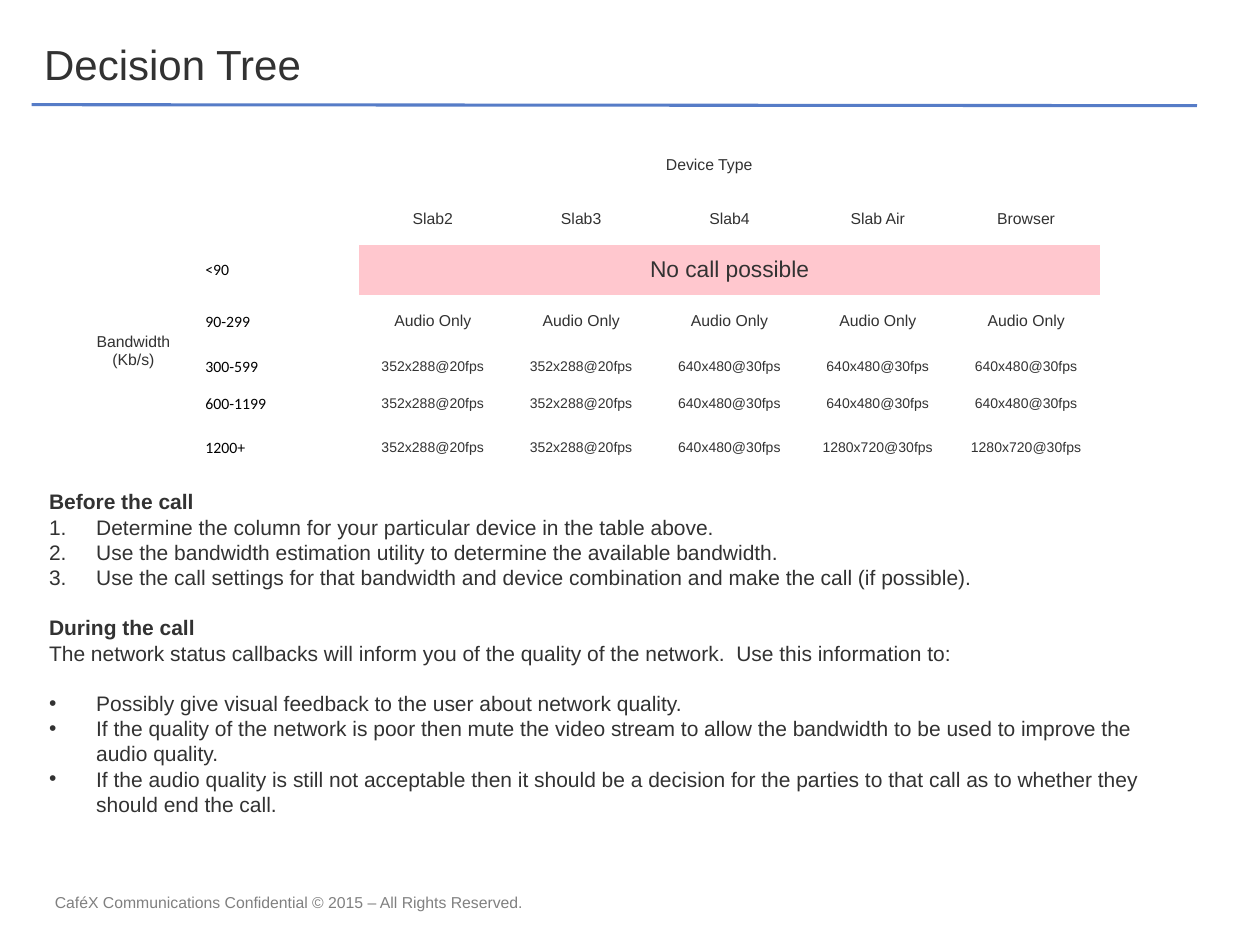
from dataclasses import dataclass

from lxml.etree import SubElement
from pptx import Presentation
from pptx.dml.color import RGBColor
from pptx.enum.shapes import MSO_CONNECTOR
from pptx.enum.text import MSO_ANCHOR, PP_ALIGN
from pptx.oxml.ns import qn
from pptx.util import Cm, Length, Pt

INK = RGBColor(0x32, 0x32, 0x32)
BLACK = RGBColor(0, 0, 0)
GREY = RGBColor(0x80, 0x80, 0x80)
BLUE = RGBColor(0x56, 0x7C, 0xC7)
PINK = RGBColor(0xFF, 0xC7, 0xCE)

INDENT = Cm(0.95)
BODY_LINE = Pt(14.4)
CELL_MARGINS = (0.3, 0.15, 0.3, 0.15)
LABEL_MARGINS = (0.03, 0.03, 0.03, 0)
EMPTY_MARGINS = (0, 0, 0, 0)

COLUMN_WIDTHS = [2.84, 3.12] + [2.99] * 5
ROW_HEIGHTS = [1.19, 0.99, 1.04, 1.04, 0.76, 0.76, 0.99]
DEVICES = ["Slab2", "Slab3", "Slab4", "Slab Air", "Browser"]
LOW, MEDIUM, HIGH = "352x288@20fps", "640x480@30fps", "1280x720@30fps"


@dataclass
class Band:
    label: str
    settings: list[str]
    size: float = 8


@dataclass
class Line:
    text: str
    bold: bool = False
    marker: str = ""
    gap: bool = False


BANDS = [
    Band("<90", ["No call possible"], 13),
    Band("90-299", ["Audio Only"] * 5, 9),
    Band("300-599", [LOW] * 2 + [MEDIUM] * 3),
    Band("600-1199", [LOW] * 2 + [MEDIUM] * 3),
    Band("1200+", [LOW] * 2 + [MEDIUM] + [HIGH] * 2),
]

BODY = [
    Line("Before the call", bold=True),
    Line("Determine the column for your particular device in the table above.", marker="number"),
    Line("Use the bandwidth estimation utility to determine the available bandwidth.", marker="number"),
    Line("Use the call settings for that bandwidth and device combination and make the call (if possible).",
         marker="number"),
    Line("During the call", bold=True, gap=True),
    Line("The network status callbacks will inform you of the quality of the network.  Use this information to:"),
    Line("Possibly give visual feedback to the user about network quality.", marker="bullet", gap=True),
    Line("If the quality of the network is poor then mute the video stream to allow the bandwidth "
         "to be used to improve the audio quality.", marker="bullet"),
    Line("If the audio quality is still not acceptable then it should be a decision for the parties "
         "to that call as to whether they should end the call.", marker="bullet"),
]


def write(paragraph, text: str, *, size: float, color: RGBColor = INK, font: str = "Arial",
          bold: bool = False, align: PP_ALIGN = PP_ALIGN.LEFT) -> None:
    paragraph.alignment = align
    run = paragraph.add_run()
    run.text = text
    run.font.name = font
    run.font.size = Pt(size)
    run.font.bold = bold
    run.font.color.rgb = color


def add_text_frame(slide, left: Length, top: Length, width: Length, height: Length):
    frame = slide.shapes.add_textbox(left, top, width, height).text_frame
    frame.word_wrap = True
    return frame


def set_margins(cell, margins: tuple) -> None:
    left, top, right, bottom = margins
    cell.margin_left, cell.margin_top = Cm(left), Cm(top)
    cell.margin_right, cell.margin_bottom = Cm(right), Cm(bottom)


def fill_cell(cell, text: str, *, margins: tuple = CELL_MARGINS, size: float = 9,
              align: PP_ALIGN = PP_ALIGN.CENTER, **text_format) -> None:
    set_margins(cell, margins)
    cell.vertical_anchor = MSO_ANCHOR.MIDDLE
    write(cell.text_frame.paragraphs[0], text, size=size, align=align, **text_format)


def add_marker(paragraph, marker: str) -> None:
    properties = paragraph._p.get_or_add_pPr()
    properties.set("marL", str(INDENT))
    properties.set("indent", str(-INDENT))
    if marker == "number":
        SubElement(properties, qn("a:buAutoNum")).set("type", "arabicPeriod")
    else:
        SubElement(properties, qn("a:buFont")).set("typeface", "Arial")
        SubElement(properties, qn("a:buChar")).set("char", "•")


def add_rule(slide) -> None:
    rule = slide.shapes.add_connector(MSO_CONNECTOR.STRAIGHT, Cm(0.64), Cm(2.11), Cm(24.13), Cm(2.13))
    rule.line.color.rgb = BLUE
    rule.line.width = Pt(1.75)
    SubElement(rule._element.spPr, qn("a:effectLst"))


def add_decision_table(slide) -> None:
    table = slide.shapes.add_table(len(ROW_HEIGHTS), len(COLUMN_WIDTHS), Cm(1.27), Cm(2.74),
                                   Cm(sum(COLUMN_WIDTHS)), Cm(sum(ROW_HEIGHTS))).table
    table.first_row = False
    table.horz_banding = False
    for column, width in zip(table.columns, COLUMN_WIDTHS):
        column.width = Cm(width)
    for row, height in zip(table.rows, ROW_HEIGHTS):
        row.height = Cm(height)
    for cell in table.iter_cells():
        cell.fill.background()
        set_margins(cell, EMPTY_MARGINS)

    table.cell(0, 1).merge(table.cell(0, 6))
    table.cell(1, 0).merge(table.cell(6, 0))
    table.cell(2, 2).merge(table.cell(2, 6))
    table.cell(2, 2).fill.solid()
    table.cell(2, 2).fill.fore_color.rgb = PINK

    fill_cell(table.cell(0, 1), "Device Type", margins=(2.6, 0.15, 0.3, 0.15))
    fill_cell(table.cell(1, 0), "Bandwidth (Kb/s)", margins=(0.3, 0.87, 0.3, 0.15))
    for column, device in enumerate(DEVICES, start=2):
        fill_cell(table.cell(1, column), device)
    for row, band in enumerate(BANDS, start=2):
        fill_cell(table.cell(row, 1), band.label, margins=LABEL_MARGINS,
                  font="Calibri", color=BLACK, align=PP_ALIGN.LEFT)
        for column, setting in enumerate(band.settings, start=2):
            fill_cell(table.cell(row, column), setting, size=band.size)


def add_body(slide) -> None:
    frame = add_text_frame(slide, Cm(0.74), Cm(9.73), Cm(23.39), Cm(7.7))
    for index, line in enumerate(BODY):
        paragraph = frame.add_paragraph() if index else frame.paragraphs[0]
        if line.marker:
            add_marker(paragraph, line.marker)
        paragraph.line_spacing = BODY_LINE
        if line.gap:
            paragraph.space_before = BODY_LINE
        write(paragraph, line.text, size=12, bold=line.bold)


def main() -> None:
    presentation = Presentation()
    presentation.slide_width, presentation.slide_height = Cm(25.4), Cm(19.05)
    slide = presentation.slides.add_slide(presentation.slide_layouts[6])

    footer = add_text_frame(slide, Cm(0.64), Cm(17.98), Cm(10.36), Cm(0.43))
    footer.margin_left = footer.margin_right = footer.margin_top = footer.margin_bottom = 0
    footer.vertical_anchor = MSO_ANCHOR.MIDDLE
    write(footer.paragraphs[0], "CaféX Communications Confidential © 2015 – All Rights Reserved.",
          size=9, color=GREY, align=PP_ALIGN.CENTER)
    add_rule(slide)
    title = add_text_frame(slide, Cm(0.64), Cm(0.66), Cm(19.25), Cm(1.27))
    write(title.paragraphs[0], "Decision Tree", size=24)
    add_decision_table(slide)
    add_body(slide)
    presentation.save("out.pptx")


if __name__ == "__main__":
    main()
